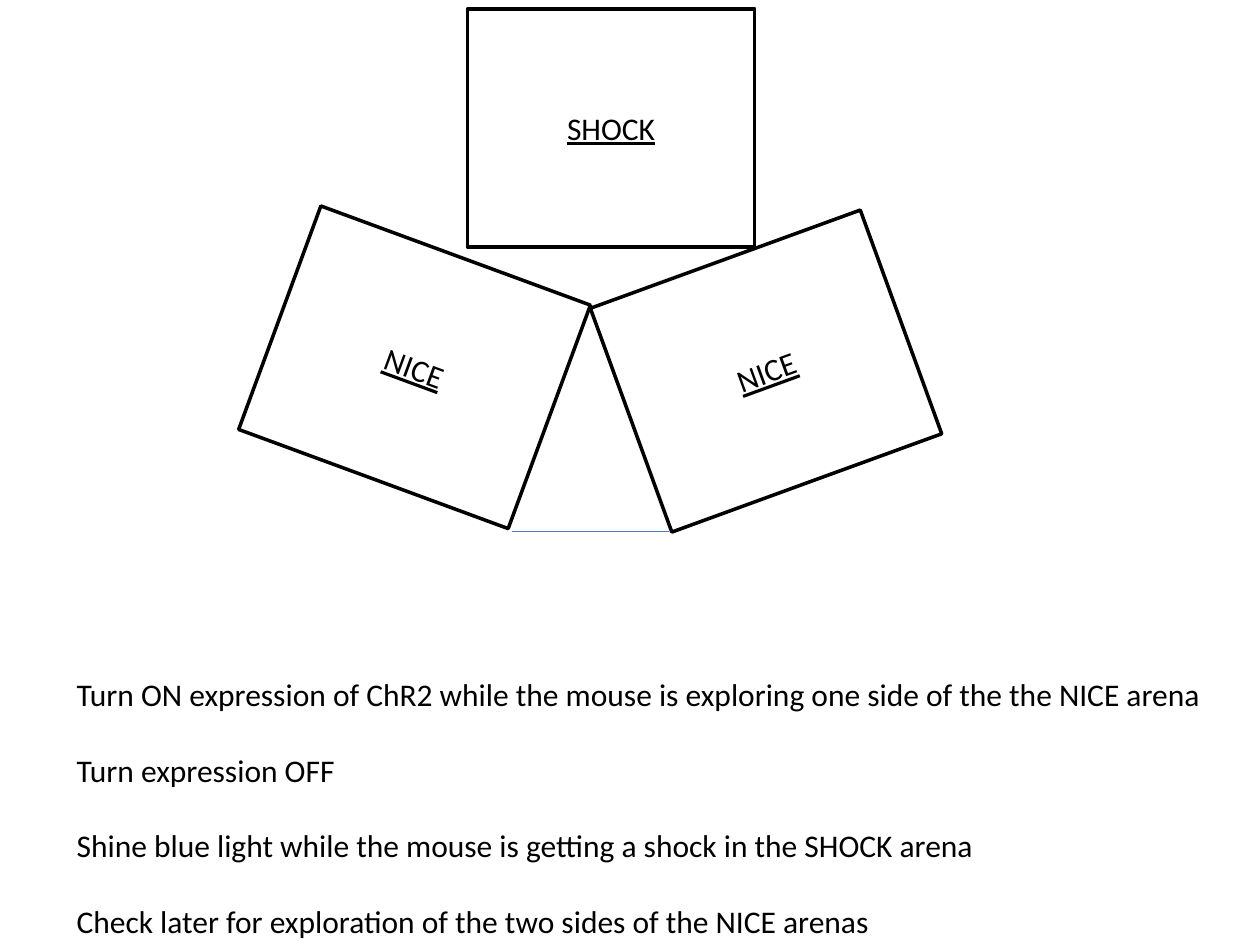
"""Build a slide of one shock arena, two nice arenas and the steps of the experiment."""
from dataclasses import dataclass

import pptx
import pptx.dml.color
import pptx.enum.shapes
import pptx.enum.text
import pptx.oxml.ns
import pptx.slide
import pptx.text.text
import pptx.util
from pptx.util import Inches, Pt


@dataclass(frozen=True)
class Theme:
    font: str = "Calibri"
    size: int = 18
    ink: str = "000000"
    paper: str = "FFFFFF"
    base: str = "4B7EBC"
    outline: float = 2
    base_width: float = 0.75
    step_gap: float = 21.6


@dataclass(frozen=True)
class Arena:
    name: str
    left: float
    top: float
    rotation: float = 0


THEME = Theme()
ARENA_WIDTH, ARENA_HEIGHT = 2.28, 1.89
NICE_ARENAS = (Arena("NICE", 2.15, 1.97, 20.2), Arena("NICE", 4.94, 2, 340))
SHOCK_ARENA = Arena("SHOCK", 3.71, 0.07)
STEPS = (
    "Turn ON expression of ChR2 while the mouse is exploring one side of the the NICE arena",
    "Turn expression OFF",
    "Shine blue light while the mouse is getting a shock in the SHOCK arena",
    "Check later for exploration of the two sides of the NICE arenas",
)


def rgb(value: str) -> pptx.dml.color.RGBColor:
    return pptx.dml.color.RGBColor.from_string(value)


def style_text(p: pptx.text.text._Paragraph, underline: bool = False) -> None:
    for r in p.runs:
        r.font.name = THEME.font
        r.font.size = Pt(THEME.size)
        r.font.color.rgb = rgb(THEME.ink)
        if underline:
            r.font.underline = True


def draw_steps(s: pptx.slide.Slide) -> None:
    tf = s.shapes.add_textbox(Inches(0.51), Inches(5.31), Inches(9.17), Inches(2.22)).text_frame
    tf.word_wrap = False
    tf.auto_size = pptx.enum.text.MSO_AUTO_SIZE.SHAPE_TO_FIT_TEXT
    tf.text = "\n".join(STEPS)
    for p in tf.paragraphs:
        style_text(p)
    for p in tf.paragraphs[1:]:
        p.space_before = Pt(THEME.step_gap)


def draw_arena(s: pptx.slide.Slide, arena: Arena) -> None:
    sp = s.shapes.add_shape(
        pptx.enum.shapes.MSO_SHAPE.RECTANGLE,
        Inches(arena.left), Inches(arena.top), Inches(ARENA_WIDTH), Inches(ARENA_HEIGHT),
    )
    sp.rotation = arena.rotation
    sp.shadow.inherit = False
    sp.fill.solid()
    sp.fill.fore_color.rgb = rgb(THEME.paper)
    sp.line.color.rgb = rgb(THEME.ink)
    sp.line.width = Pt(THEME.outline)
    tf = sp.text_frame
    tf.text = arena.name
    tf.vertical_anchor = pptx.enum.text.MSO_ANCHOR.MIDDLE
    p = tf.paragraphs[0]
    p.alignment = pptx.enum.text.PP_ALIGN.CENTER
    style_text(p, underline=True)


def draw_base(s: pptx.slide.Slide) -> None:
    line = s.shapes.add_connector(
        pptx.enum.shapes.MSO_CONNECTOR.STRAIGHT,
        Inches(4.06), Inches(4.22), Inches(5.31), Inches(4.22),
    )
    line.line.color.rgb = rgb(THEME.base)
    line.line.width = Pt(THEME.base_width)
    properties = line._element.spPr
    properties.append(properties.makeelement(pptx.oxml.ns.qn("a:effectLst"), {}))


def main() -> None:
    prs = pptx.Presentation()
    prs.slide_width, prs.slide_height = Inches(10), Inches(7.5)
    s = prs.slides.add_slide(prs.slide_layouts[6])
    draw_steps(s)
    for arena in NICE_ARENAS:
        draw_arena(s, arena)
    draw_base(s)
    draw_arena(s, SHOCK_ARENA)
    prs.save("out.pptx")


if __name__ == "__main__":
    main()
